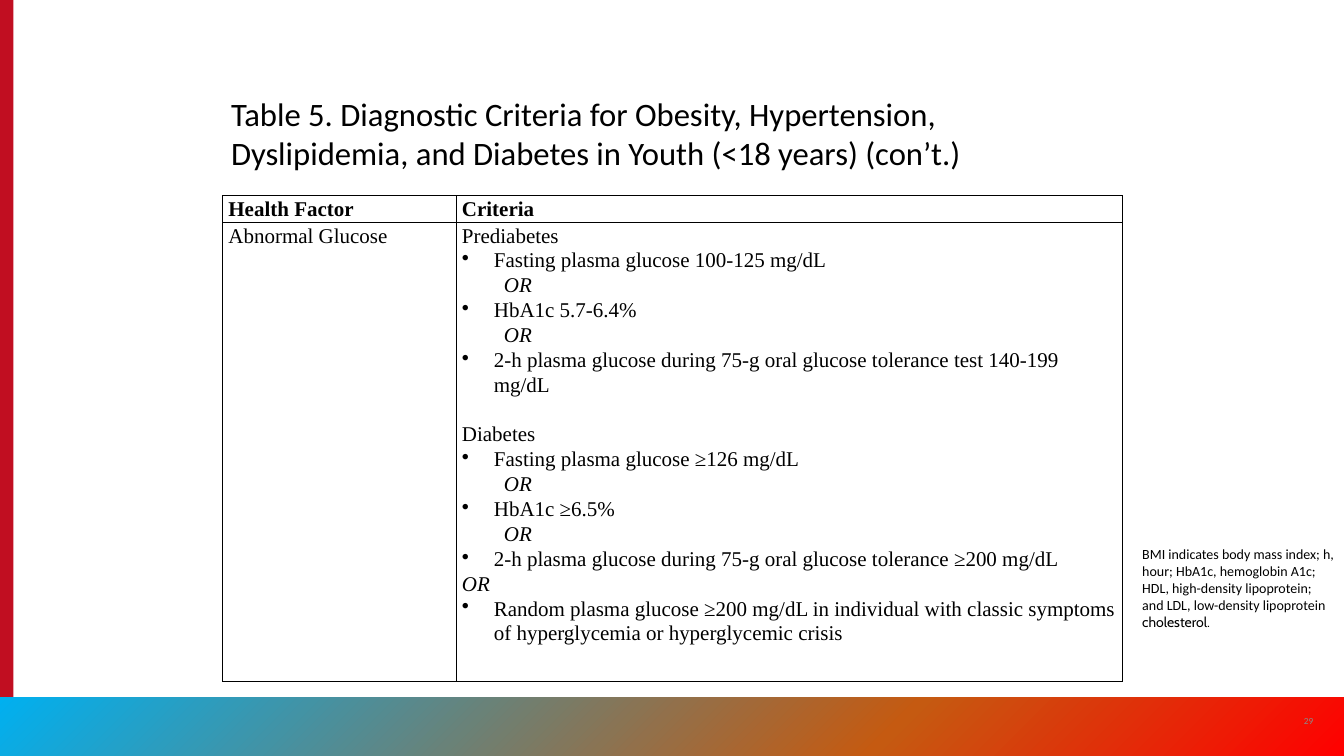
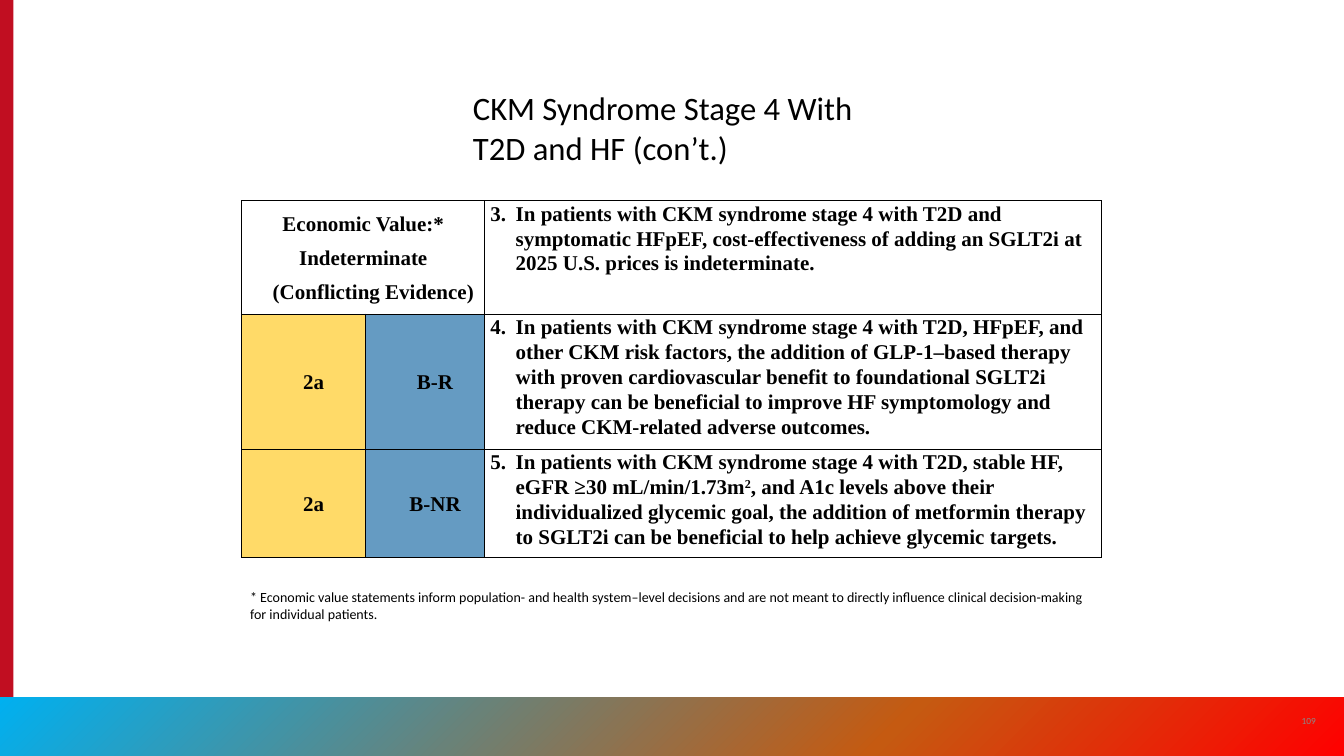
import copy

import pptx
import pptx.dml.color
import pptx.enum.shapes
import pptx.enum.text
import pptx.oxml.ns
import pptx.util
from lxml import etree

Inches = pptx.util.Inches
Pt = pptx.util.Pt
ALIGN = pptx.enum.text.PP_ALIGN
ANCHOR = pptx.enum.text.MSO_ANCHOR
qn = pptx.oxml.ns.qn

# Shared look
BLACK, GREY, RED = "000000", "8A8B8A", "C10E21"
YELLOW, BLUE = "FFDA68", "659BC2"
BAND_STOPS = [(0, "00B0F0"), (0.66, "C55A11"), (1, "FF0000")]
BODY_FONT, TABLE_FONT = "Calibri", "Times New Roman"

# Paragraph kinds in the tables: left margin, first-line indent, alignment, italic
KINDS = {
    "plain": (0, 0, ALIGN.LEFT, False),
    "bullet": (0.38, -0.38, ALIGN.LEFT, False),
    "number": (0.3, -0.3, ALIGN.LEFT, False),
    "or": (0.5, 0, ALIGN.LEFT, True),
    "or left": (0, 0, ALIGN.LEFT, True),
    "centred": (0, 0, ALIGN.CENTER, False),
    "centred in": (0.24, 0, ALIGN.CENTER, False),
}

# Cells: (paragraphs, bold, space after, fill); ^ marks superscript
criteria = [
    ("plain", "Prediabetes"),
    ("bullet", "Fasting plasma glucose 100-125 mg/dL"),
    ("or", "OR"),
    ("bullet", "HbA1c 5.7-6.4%"),
    ("or", "OR"),
    ("bullet", "2-h plasma glucose during 75-g oral glucose tolerance test 140-199 mg/dL"),
    ("plain", "Diabetes"),
    ("bullet", "Fasting plasma glucose ≥126 mg/dL"),
    ("or", "OR"),
    ("bullet", "HbA1c ≥6.5%"),
    ("or", "OR"),
    ("bullet", "2-h plasma glucose during 75-g oral glucose tolerance ≥200 mg/dL"),
    ("or left", "OR"),
    ("bullet", "Random plasma glucose ≥200 mg/dL in individual with classic symptoms "
               "of hyperglycemia or hyperglycemic crisis"),
]
economic_value = [
    ("centred", "Economic Value:*"),
    ("centred", "Indeterminate"),
    ("centred in", "(Conflicting Evidence)"),
]
advice = [
    "In patients with CKM syndrome stage 4 with T2D and symptomatic HFpEF, "
    "cost-effectiveness of adding an SGLT2i at 2025 U.S. prices is indeterminate.",
    "In patients with CKM syndrome stage 4 with T2D, HFpEF, and other CKM risk factors, "
    "the addition of GLP-1–based therapy with proven cardiovascular benefit to foundational "
    "SGLT2i therapy can be beneficial to improve HF symptomology and reduce CKM-related "
    "adverse outcomes.",
    "In patients with CKM syndrome stage 4 with T2D, stable HF, eGFR ≥30 mL/min/1.73m^2^, "
    "and A1c levels above their individualized glycemic goal, the addition of metformin "
    "therapy to SGLT2i can be beneficial to help achieve glycemic targets.",
]
advice_cells = [([("number", text)], True, 0, None) for text in advice]
class_cell = ([("centred in", "2a")], True, 8, YELLOW)

slides = [
    {
        "number": "29",
        "title": "Table 5. Diagnostic Criteria for Obesity, Hypertension, Dyslipidemia, "
                 "and Diabetes in Youth (<18 years) (con’t.)",
        "title at": (2.65, 1.07, 10.71, 1.04),
        "table at": (2.65, 2.33),
        "columns": [2.78, 7.93],
        "rows": [0.32, 5.46],
        "cells": [
            [([("plain", "Health Factor")], True, 8, None),
             ([("plain", "Criteria")], True, 8, None)],
            [([("plain", "Abnormal Glucose")], False, 0, None),
             (criteria, False, 0, None)],
        ],
        "note at": (13.5, 6.45, 2.5, 1.31),
        "note": [("BMI indicates body mass index; h, hour; HbA1c, hemoglobin A1c; HDL, "
                  "high-density lipoprotein; and LDL, low-density lipoprotein ", BODY_FONT),
                 ("cholesterol.", "Cabin")],
    },
    {
        "number": "109",
        "title": "CKM Syndrome Stage 4 With T2D and HF (con’t.)",
        "title at": (5.53, 1, 4.95, 1.04),
        "table at": (2.88, 2.39),
        "columns": [1.47, 1.42, 7.34],
        "rows": [1.35, 1.61, 1.28],
        "cells": [
            [(economic_value, True, 8, None), None, advice_cells[0]],
            [class_cell, ([("centred in", "B-R")], True, 8, BLUE), advice_cells[1]],
            [class_cell, ([("centred in", "B-NR")], True, 8, BLUE), advice_cells[2]],
        ],
        "note at": (2.88, 6.96, 10.23, 0.5),
        "note": [("* Economic value statements inform population- and health system–level "
                  "decisions and are not meant to directly influence clinical "
                  "decision-making for individual patients.", BODY_FONT)],
    },
]


def colour(code):
    return pptx.dml.color.RGBColor.from_string(code)


def style(span, size, font, code=BLACK, bold=False, italic=False):
    span.font.size = Pt(size)
    span.font.name = font
    span.font.color.rgb = colour(code)
    span.font.bold = bold
    span.font.italic = italic


deck = pptx.Presentation()
deck.slide_width, deck.slide_height = Inches(16), Inches(9)
layout = deck.slide_layouts[5]
pages = [deck.slides.add_slide(layout) for _ in slides]

# Side bar and bottom band, moved onto the shared layout
bands = []
for place in [(0, 0, 0.16, 9), (0, 8.3, 16, 0.7)]:
    band = pages[0].shapes.add_shape(
        pptx.enum.shapes.MSO_SHAPE.RECTANGLE, *map(Inches, place))
    band.shadow.inherit = False
    band.line.fill.background()
    bands.append(band)
side_bar, bottom_band = bands
side_bar.fill.solid()
side_bar.fill.fore_color.rgb = colour(RED)
bottom_band.fill.gradient()
bottom_band.fill.gradient_angle = 315
stop_list = bottom_band.element.find(".//" + qn("a:gsLst"))
stop_list.append(copy.deepcopy(stop_list[-1]))
for stop, (position, code) in zip(bottom_band.fill.gradient_stops, BAND_STOPS):
    stop.position = position
    stop.color.rgb = colour(code)
for index, band in enumerate(bands):
    layout.shapes.element.insert(2 + index, band.element)

for page, content in zip(pages, slides):
    # Page number
    box = page.shapes.add_textbox(*map(Inches, (15.34, 8.34, 0.48, 0.48)))
    box.text_frame.text = content["number"]
    box.text_frame.vertical_anchor = ANCHOR.MIDDLE
    para = box.text_frame.paragraphs[0]
    para.alignment = ALIGN.CENTER
    style(para.runs[0], 8, BODY_FONT, GREY)

    # Title
    title = page.shapes.title
    title.left, title.top, title.width, title.height = map(Inches, content["title at"])
    title.text_frame.text = content["title"]
    title.text_frame.auto_size = pptx.enum.text.MSO_AUTO_SIZE.NONE
    title.text_frame.vertical_anchor = ANCHOR.TOP
    para = title.text_frame.paragraphs[0]
    para.alignment = ALIGN.LEFT
    style(para.runs[0], 28, BODY_FONT)

    # Table
    columns, rows = content["columns"], content["rows"]
    size = (sum(columns), sum(rows))
    table = page.shapes.add_table(
        len(rows), len(columns), *map(Inches, content["table at"] + size)).table
    table.first_row = table.horz_banding = False
    for column, width in zip(table.columns, columns):
        column.width = Inches(width)
    for row, height in zip(table.rows, rows):
        row.height = Inches(height)

    for row_index, row_cells in enumerate(content["cells"]):
        for column_index, cell_content in enumerate(row_cells):
            cell = table.cell(row_index, column_index)
            cell.margin_left = cell.margin_right = Inches(0.07)
            cell.margin_top = cell.margin_bottom = 0
            properties = cell._tc.get_or_add_tcPr()
            for side in ("a:lnL", "a:lnR", "a:lnT", "a:lnB"):
                border = etree.SubElement(properties, qn(side), w=str(Pt(1)))
                paint = etree.SubElement(border, qn("a:solidFill"))
                etree.SubElement(paint, qn("a:srgbClr"), val=BLACK)
            if cell_content is None:
                cell.fill.background()
                table.cell(row_index, column_index - 1).merge(cell)
                continue

            lines, bold, space_after, fill = cell_content
            if fill:
                cell.fill.solid()
                cell.fill.fore_color.rgb = colour(fill)
            else:
                cell.fill.background()
            if lines[0][0].startswith("centred"):
                cell.vertical_anchor = ANCHOR.MIDDLE
            for line_index, (kind, text) in enumerate(lines):
                frame = cell.text_frame
                para = frame.add_paragraph() if line_index else frame.paragraphs[0]
                margin, indent, alignment, italic = KINDS[kind]
                para.alignment = alignment
                para.line_spacing = 1.07
                para.space_after = Pt(space_after)
                if text == "Diabetes":
                    para.space_before = Pt(21.3)
                settings = para._p.get_or_add_pPr()
                settings.set("marL", str(Inches(margin)))
                settings.set("indent", str(Inches(indent)))
                if kind == "bullet":
                    etree.SubElement(settings, qn("a:buChar"), char="•")
                elif kind == "number":
                    etree.SubElement(settings, qn("a:buAutoNum"),
                                     type="arabicPeriod", startAt=str(row_index + 3))
                for part_index, part in enumerate(text.split("^")):
                    span = para.add_run()
                    span.text = part
                    style(span, 18, TABLE_FONT, bold=bold, italic=italic)
                    if part_index % 2:
                        span._r.get_or_add_rPr().set("baseline", "30000")

    # Note
    box = page.shapes.add_textbox(*map(Inches, content["note at"]))
    box.text_frame.word_wrap = True
    for text, font in content["note"]:
        span = box.text_frame.paragraphs[0].add_run()
        span.text = text
        style(span, 12, font)

deck.save("out.pptx")
